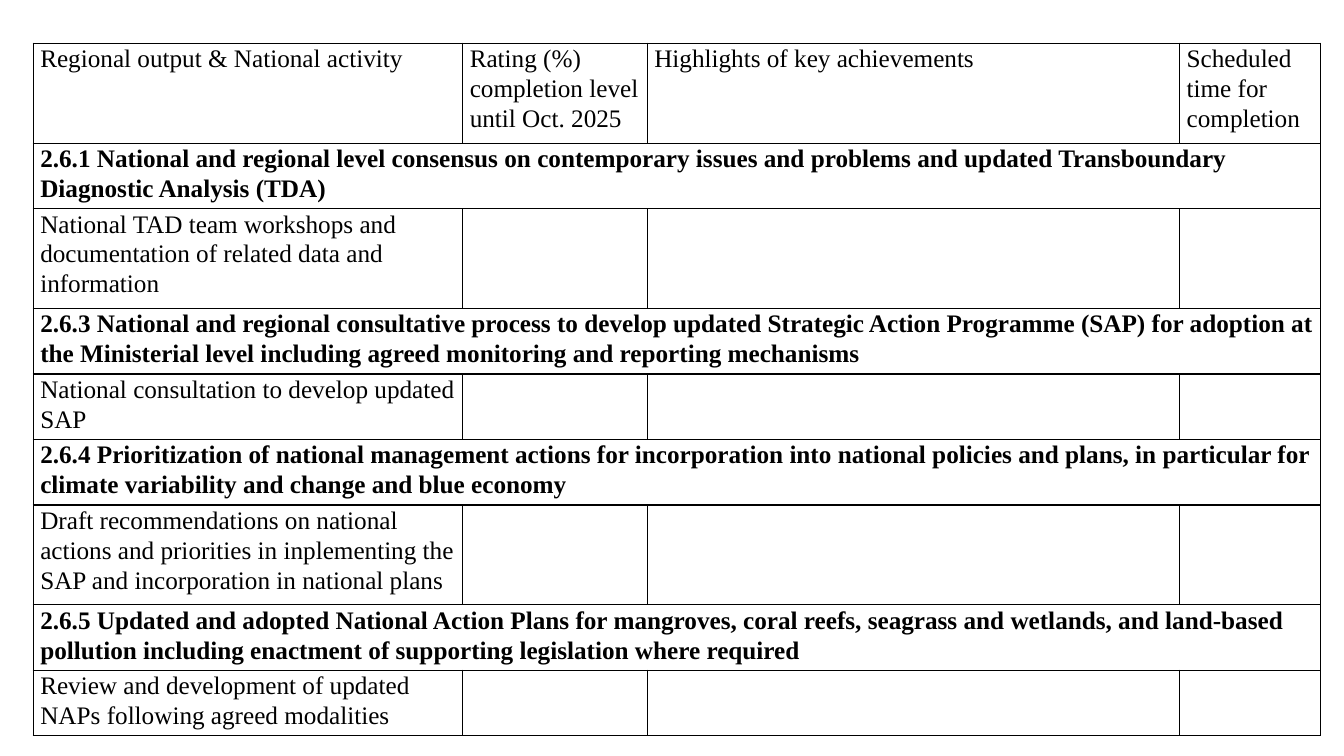
from lxml.etree import SubElement
from pptx import Presentation
from pptx.dml.color import RGBColor
from pptx.oxml.ns import qn
from pptx.util import Inches, Pt

COLORS = {"ink": "000000", "paper": "FFFFFF"}
COL_WIDTHS = [4.26, 1.83, 5.28, 1.4]
TALL, SHORT = 0.99, 0.65
HEADINGS = [
    "Regional output & National activity",
    "Rating (%) completion level until Oct. 2025",
    "Highlights of key achievements",
    "Scheduled time for completion",
]
OUTPUTS = [
    ("2.6.1 National and regional level consensus on contemporary issues and problems "
     "and updated Transboundary Diagnostic Analysis (TDA)",
     "National TAD team workshops and documentation of related data and information", TALL),
    ("2.6.3 National and regional consultative process to develop updated Strategic Action "
     "Programme (SAP) for adoption at the Ministerial level including agreed monitoring and "
     "reporting mechanisms",
     "National consultation to develop updated SAP", SHORT),
    ("2.6.4 Prioritization of national management actions for incorporation into national "
     "policies and plans, in particular for climate variability and change and blue economy",
     "Draft recommendations on national actions and priorities in inplementing the SAP and "
     "incorporation in national plans", TALL),
    ("2.6.5 Updated and adopted National Action Plans for mangroves, coral reefs, seagrass and "
     "wetlands, and land-based pollution including enactment of supporting legislation where "
     "required",
     "Review and development of updated NAPs following agreed modalities", SHORT),
]


class SlideBuilder:
    font = {"name": "Times New Roman", "size": Pt(18)}
    paragraph = {"line_spacing": 1.07, "space_after": Pt(8)}
    margins = {"margin_left": Inches(0.07), "margin_right": Inches(0.07),
               "margin_top": 0, "margin_bottom": 0}
    plain = {"first_row": False, "horz_banding": False}

    def __init__(self, prs):
        self.s = prs.slides.add_slide(prs.slide_layouts[6])

    def apply(self, target, values):
        for key, value in values.items():
            setattr(target, key, value)

    def table(self, left, top, widths, heights):
        frame = self.s.shapes.add_table(
            len(heights), len(widths), Inches(left), Inches(top),
            Inches(sum(widths)), Inches(sum(heights)))
        table = frame.table
        self.apply(table, self.plain)
        for column, width in zip(table.columns, widths):
            column.width = Inches(width)
        for row, height in zip(table.rows, heights):
            row.height = Inches(height)
        for cell in table.iter_cells():
            self.borders(cell)
            cell.fill.solid()
            cell.fill.fore_color.rgb = RGBColor.from_string(COLORS["paper"])
            self.apply(cell, self.margins)
        return table

    def borders(self, cell):
        tcPr = cell._tc.get_or_add_tcPr()
        for side in ("lnL", "lnR", "lnT", "lnB"):
            ln = SubElement(tcPr, qn(f"a:{side}"), w=str(Pt(1)))
            fill = SubElement(ln, qn("a:solidFill"))
            SubElement(fill, qn("a:srgbClr"), val=COLORS["ink"])

    def text(self, cell, words, bold=False):
        p = cell.text_frame.paragraphs[0]
        self.apply(p, self.paragraph)
        r = p.add_run()
        r.text = words
        self.apply(r.font, {**self.font, "bold": bold})
        r.font.color.rgb = RGBColor.from_string(COLORS["ink"])


def main():
    prs = Presentation()
    prs.slide_width, prs.slide_height = Inches(13.33), Inches(7.5)
    builder = SlideBuilder(prs)
    heights = [TALL]
    for _, _, height in OUTPUTS:
        heights += [SHORT, height]
    table = builder.table(0.33, 0.43, COL_WIDTHS, heights)
    for col, heading in enumerate(HEADINGS):
        builder.text(table.cell(0, col), heading)
    for i, (output, activity, _) in enumerate(OUTPUTS):
        row = 1 + 2 * i
        table.cell(row, 0).merge(table.cell(row, len(COL_WIDTHS) - 1))
        builder.text(table.cell(row, 0), output, bold=True)
        builder.text(table.cell(row + 1, 0), activity)
    prs.save("out.pptx")


if __name__ == "__main__":
    main()
